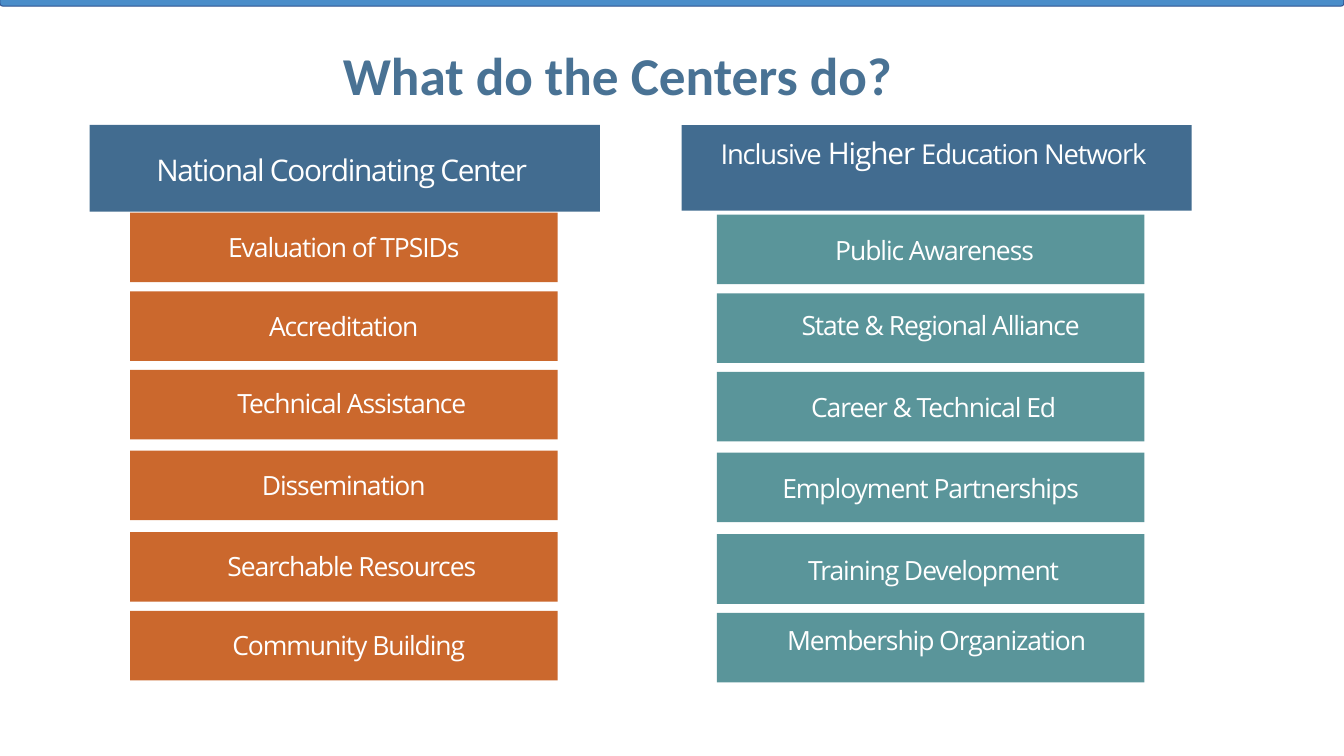
import pptx
import pptx.dml.color
import pptx.enum.shapes
import pptx.enum.text
import pptx.util
from pptx.dml.color import RGBColor
from pptx.util import Inches

TITLE_BLUE = RGBColor(0x49, 0x72, 0x94)
HEADER_BLUE = RGBColor(0x42, 0x6C, 0x90)
ORANGE = RGBColor(0xCB, 0x68, 0x2D)
TEAL = RGBColor(0x5A, 0x95, 0x9A)
STRIP_BLUE = RGBColor(0x4A, 0x8D, 0xC9)
STRIP_EDGE = RGBColor(0x2F, 0x52, 0x8F)
WHITE = RGBColor(0xFF, 0xFF, 0xFF)

HEADER_TOP, HEADER_WIDTH = 1.24, 5.06
BAR_TOPS = (2.11, 2.89, 3.67, 4.47, 5.28, 6.06)
BAR_WIDTH, BAR_HEIGHT = 4.24, 0.69

# Each bar: label, sideways shift of its text, drop of its text from the bar's top
COORDINATING_BARS = (
    ("Evaluation of TPSIDs", 0, 0.18),
    ("Accreditation", 0, 0.18),
    ("Technical Assistance", 0.08, 0.17),
    ("Dissemination", 0, 0.18),
    ("Searchable Resources", 0.08, 0.18),
    ("Community Building", 0.05, 0.18),
)
NETWORK_BARS = (
    ("Public Awareness", 0.04, 0.19),
    ("State & Regional Alliance", 0.1, 0.15),
    ("Career & Technical Ed", 0.03, 0.19),
    ("Employment Partnerships", 0, 0.19),
    ("Training Development", 0.03, 0.19),
    ("Membership Organization", 0.06, 0.11),
)


def write_text(shape, pieces, *, font, color, line_spacing, bold=False,
               tracking=0, shift=0, drop=0):
    """Write (text, size) pieces as one centred line, moved by shift and drop."""
    frame = shape.text_frame
    frame.word_wrap = True
    frame.auto_size = pptx.enum.text.MSO_AUTO_SIZE.NONE
    frame.vertical_anchor = pptx.enum.text.MSO_ANCHOR.TOP
    frame.margin_left = Inches(max(0, 2 * shift))
    frame.margin_right = Inches(max(0, -2 * shift))
    frame.margin_top = Inches(drop)
    frame.margin_bottom = 0
    paragraph = frame.paragraphs[0]
    paragraph.alignment = pptx.enum.text.PP_ALIGN.CENTER
    paragraph.line_spacing = pptx.util.Pt(line_spacing)
    paragraph.space_before = pptx.util.Pt(0)
    for text, size in pieces:
        run = paragraph.add_run()
        run.text = text
        run.font.name = font
        run.font.size = pptx.util.Pt(size)
        run.font.bold = bold
        run.font.color.rgb = color
        if tracking:
            run.font._element.set("spc", str(round(tracking * 100)))


def add_box(slide, left, top, width, height, fill, rounded=False):
    kinds = pptx.enum.shapes.MSO_SHAPE
    shape = slide.shapes.add_shape(
        kinds.ROUNDED_RECTANGLE if rounded else kinds.RECTANGLE,
        Inches(left), Inches(top), Inches(width), Inches(height))
    shape.shadow.inherit = False
    shape.fill.solid()
    shape.fill.fore_color.rgb = fill
    shape.line.fill.background()
    return shape


def add_title(slide, text):
    title = slide.shapes.title
    title.left, title.top = Inches(0.44), Inches(0.48)
    title.width, title.height = Inches(11.37), Inches(0.58)
    write_text(title, [(text, 38)], font="Calibri", color=TITLE_BLUE,
               line_spacing=41, bold=True)


def add_header(slide, left, height, pieces, line_spacing, drop, tracking):
    header = add_box(slide, left, HEADER_TOP, HEADER_WIDTH, height, HEADER_BLUE)
    write_text(header, pieces, font="Open Sans", color=WHITE, tracking=tracking,
               line_spacing=line_spacing, shift=-0.03, drop=drop)


def add_bars(slide, left, offset, fill, bars):
    for top, (label, shift, drop) in zip(BAR_TOPS, bars):
        bar = add_box(slide, left, top + offset, BAR_WIDTH, BAR_HEIGHT, fill)
        write_text(bar, [(label, 18.9)], font="Open Sans", color=WHITE,
                   line_spacing=22.8, tracking=-0.8, shift=shift, drop=drop)


def add_top_strip(slide):
    strip = add_box(slide, 0, -0.09, 13.33, 0.15, STRIP_BLUE, rounded=True)
    strip.adjustments[0] = 0.18
    strip.line.color.rgb = STRIP_EDGE
    strip.line.width = pptx.util.Pt(0.75)


def main():
    presentation = pptx.Presentation()
    presentation.slide_width = Inches(13.33)
    presentation.slide_height = Inches(7.5)
    slide = presentation.slides.add_slide(presentation.slide_layouts[5])

    add_title(slide, "What do the Centers do?")
    add_header(slide, 0.89, 0.86, [("National Coordinating Center", 21.3)],
               line_spacing=26.8, drop=0.25, tracking=-0.9)
    add_bars(slide, 1.29, 0, ORANGE, COORDINATING_BARS)
    add_header(slide, 6.76, 0.85,
               [("Inclusive ", 19.6), ("Higher", 21.3), (" Education Network", 19.6)],
               line_spacing=23.5, drop=0.12, tracking=-0.8)
    add_bars(slide, 7.11, 0.02, TEAL, NETWORK_BARS)
    add_top_strip(slide)
    presentation.save("out.pptx")


if __name__ == "__main__":
    main()
